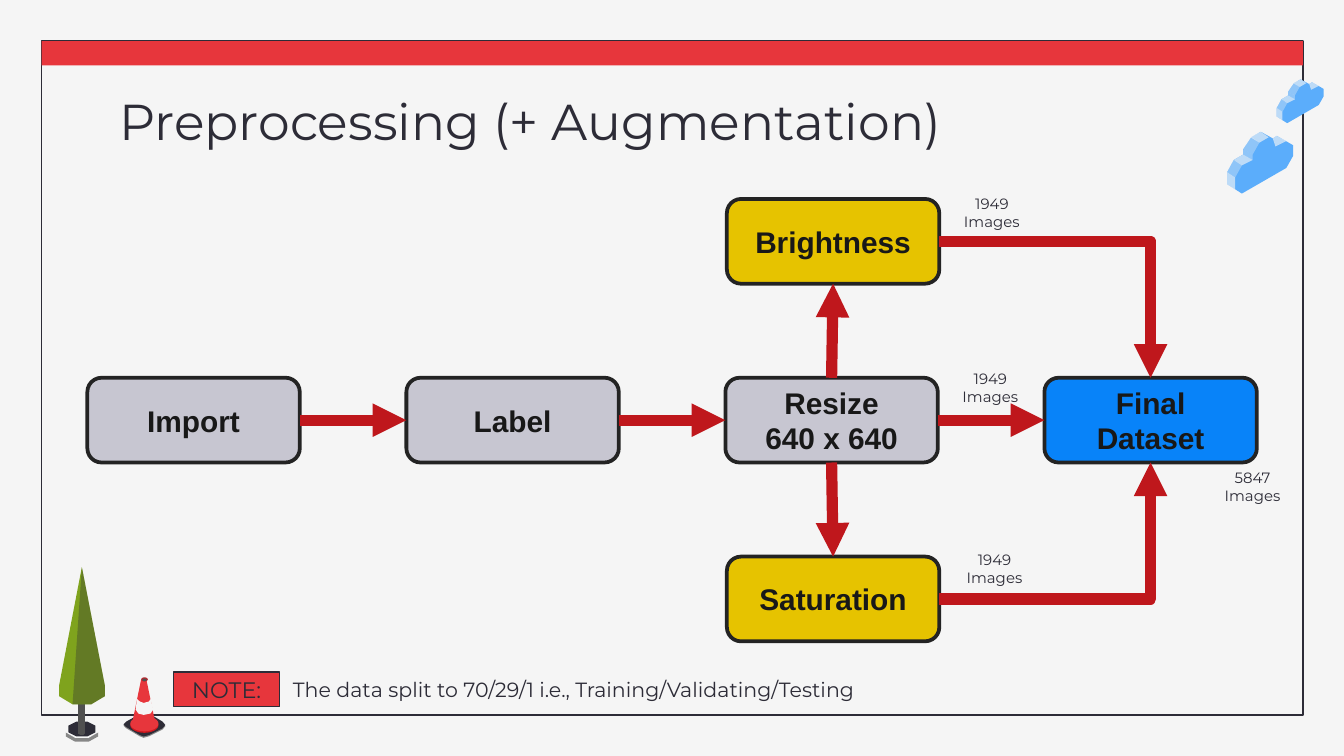
"""Build the slide on image preprocessing and augmentation as a flow diagram."""
from lxml.etree import SubElement
from pptx import Presentation
from pptx.dml.color import RGBColor
from pptx.enum.shapes import MSO_CONNECTOR as LINK, MSO_SHAPE as SHAPE
from pptx.enum.text import MSO_ANCHOR as ANCHOR, MSO_AUTO_SIZE as FIT, PP_ALIGN as ALIGN
from pptx.oxml.ns import qn
from pptx.util import Pt

PAPER = RGBColor(0xF5, 0xF5, 0xF5)
INK = RGBColor(0x2D, 0x2C, 0x37)
RED = RGBColor(0xE7, 0x36, 0x3C)
DARK_RED = RGBColor(0xCE, 0x18, 0x1E)
TIP_RED = RGBColor(0xB1, 0x28, 0x2F)
ARROW_RED = RGBColor(0xBF, 0x17, 0x1C)
LILAC = RGBColor(0xC7, 0xC6, 0xD1)
BLUE = RGBColor(0x08, 0x83, 0xF9)
YELLOW = RGBColor(0xE6, 0xC3, 0x00)
EDGE = RGBColor(0x23, 0x23, 0x23)
BLACK = RGBColor(0x18, 0x18, 0x18)
SKY = RGBColor(0x5B, 0xAD, 0xFB)
GRAY = RGBColor(0x87, 0x87, 0x87)
BARK = RGBColor(0x50, 0x50, 0x50)
LEAF = RGBColor(0x7F, 0xA3, 0x1D)

TITLE = "Preprocessing (+ Augmentation)"
NOTE_TAG = "NOTE:"
NOTE = "The data split to 70/29/1 i.e., Training/Validating/Testing"
STEPS = {
    "import": (["Import"], 0, 0, LILAC),
    "label": (["Label"], 1, 0, LILAC),
    "resize": (["Resize", "640 x 640"], 2, 0, LILAC),
    "final": (["Final Dataset"], 3, 0, BLUE),
    "brightness": (["Brightness"], 2, -1, YELLOW),
    "saturation": (["Saturation"], 2, 1, YELLOW),
}
TOP, LEFT, BOTTOM, RIGHT = range(4)
FLOWS = [
    ("import", RIGHT, "label", LEFT),
    ("label", RIGHT, "resize", LEFT),
    ("resize", RIGHT, "final", LEFT),
    ("resize", TOP, "brightness", BOTTOM),
    ("resize", BOTTOM, "saturation", TOP),
    ("saturation", RIGHT, "final", BOTTOM),
    ("brightness", RIGHT, "final", TOP),
]
COUNTS = [
    ("1949 Images", 501.8, 194.4, 57.6),
    ("1949 Images", 502.6, 100.8, 57.6),
    ("1949 Images", 504, 291.6, 57.6),
    ("5847 Images", 643.7, 247.7, 54.7),
]

CLOUDS = [(657.4, 70.6, 1), (684, 42.5, 0.71)]
CLOUD = [
    (SKY, 100, [(18, 0), (13, 2.9), (8.6, 9.4), (8.6, 12.2), (3.6, 15.1), (0, 21.6), (0, 28.1),
                (7.9, 33.1), (31.7, 19.4), (35.3, 13), (35.3, 7.2), (26.6, 2.2), (24.5, 3.6)]),
    (PAPER, 64, [(18, 0), (12.5, 2.9), (17.3, 5.8), (22.3, 2.9)]),
    (PAPER, 64, [(8.6, 12.2), (3.6, 15.1), (7.9, 18), (13.7, 15.1)]),
    (PAPER, 34, [(3.6, 15.1), (0, 21.6), (4.3, 24.5), (7.9, 18)]),
    (PAPER, 34, [(8.6, 9.4), (8.6, 12.2), (13.7, 15.1), (13.7, 12.2)]),
    (PAPER, 64, [(0, 21.6), (0, 28.1), (4.3, 31), (4.3, 24.5)]),
    (PAPER, 64, [(26.6, 2.2), (24.5, 3.6), (25.9, 7.9), (31.7, 5)]),
    (PAPER, 34, [(13, 2.9), (8.6, 9.4), (13.7, 12.2), (17.3, 5.8)]),
]
TREE = [
    (GRAY, 100, [(35.3, 392.4), (52.6, 392.4), (52.6, 394.6), (47.5, 397.4), (40.3, 397.4),
                 (35.3, 394.6)]),
    (PAPER, 100, [(40.3, 385.9), (35.3, 388.8), (35.3, 392.4), (40.3, 395.3), (47.5, 395.3),
                  (52.6, 392.4), (52.6, 388.8), (47.5, 385.9)]),
    (INK, 100, [(41, 386.6), (36.7, 388.8), (36.7, 392.4), (41, 394.6), (46.8, 394.6),
                (51.1, 392.4), (51.1, 388.8), (46.8, 386.6)]),
    (BARK, 100, [(41.8, 373), (45.4, 373), (45.4, 393.1), (44.6, 393.8), (43.2, 393.8),
                 (41.8, 393.1)]),
    (LEAF, 100, [(43.9, 303.8), (31.7, 367.2), (31.7, 373), (38.9, 377.3), (49, 377.3),
                 (56.2, 373), (56.2, 367.2)]),
    (INK, 34, [(43.9, 303.8), (38.9, 377.3), (49, 377.3), (56.2, 373), (56.2, 367.2)]),
]
CONE_BASE = [(77, 382.3), (74.2, 383), (67.7, 386.6), (66.2, 388.1), (67.7, 389.5), (74.9, 393.8),
             (77, 394.6), (79.9, 393.8), (87.1, 390.2), (88.6, 388.4), (87.1, 386.6), (79.9, 382.3)]
CONE_RINGS = [(DARK_RED, 69.8, 384.4, 15.1, 8.2), (RED, 69.8, 383.6, 15.1, 8.2)]
CONE_BODY = [
    (RED, 100, [(75.6, 364.3), (71.3, 385.2), (72.7, 387.4), (75, 388.6), (77, 388.8),
                (79.2, 388.6), (81.4, 387.4), (82.8, 385.2), (78.5, 364.3)]),
    (PAPER, 100, [(73.4, 374.4), (72.7, 380.2), (74.2, 382.3), (77, 383), (80.6, 382.3),
                  (82.1, 380.2), (80.6, 374.4), (79.9, 375.8), (77, 376.6), (74.9, 375.8)]),
]
CONE_TIP = [(TIP_RED, 75.6, 362.9, 3.6, 2.2), (BARK, 76.3, 363.6, 2.2, 1.4)]

prs = Presentation()
prs.slide_width, prs.slide_height = Pt(720), Pt(405)
slide = prs.slides.add_slide(prs.slide_layouts[5])
slide.background.fill.solid()
slide.background.fill.fore_color.rgb = PAPER
shapes = slide.shapes


def paint(shape, fill=None, line=None, weight=0.75, opacity=100):
    shape.shadow.inherit = False
    if fill is None:
        shape.fill.background()
    else:
        shape.fill.solid()
        shape.fill.fore_color.rgb = fill
        if opacity < 100:
            color = shape.fill._xPr.find(qn("a:solidFill"))[0]
            SubElement(color, qn("a:alpha"), val=str(opacity * 1000))
    if line is None:
        shape.line.fill.background()
    else:
        shape.line.color.rgb = line
        shape.line.width = Pt(weight)
    return shape


def preset(kind, left, top, width, height, **look):
    return paint(shapes.add_shape(kind, Pt(left), Pt(top), Pt(width), Pt(height)), **look)


def draw(parts, left=0, top=0, scale=1):
    for color, opacity, points in parts:
        corners = [(Pt(left + x * scale), Pt(top + y * scale)) for x, y in points]
        outline = shapes.build_freeform(*corners[0])
        outline.add_line_segments(corners[1:], close=True)
        paint(outline.convert_to_shape(), color, opacity=opacity)


def ovals(parts):
    for color, *place in parts:
        preset(SHAPE.OVAL, *place, fill=color)


def write(shape, lines, size, color=INK, font="Montserrat", bold=False,
          align=ALIGN.CENTER, anchor=ANCHOR.MIDDLE, inset=3.6):
    frame = shape.text_frame
    frame.word_wrap, frame.auto_size, frame.vertical_anchor = True, FIT.NONE, anchor
    frame.margin_left = frame.margin_right = Pt(7.2)
    frame.margin_top = frame.margin_bottom = Pt(inset)
    for i, line in enumerate(lines):
        paragraph = frame.add_paragraph() if i else frame.paragraphs[0]
        paragraph.alignment = align
        run = paragraph.add_run()
        run.text = line
        run.font.size, run.font.name, run.font.bold = Pt(size), font, bold
        run.font.color.rgb = color


def textbox(left, top, width, height):
    return shapes.add_textbox(Pt(left), Pt(top), Pt(width), Pt(height))


preset(SHAPE.RECTANGLE, 22.3, 22, 675.7, 361, line=INK)
preset(SHAPE.RECTANGLE, 22.3, 22, 675.7, 13, fill=RED)
for cloud_left, cloud_top, cloud_scale in CLOUDS:
    draw(CLOUD, cloud_left, cloud_top, cloud_scale)
draw(TREE)
draw([(GRAY, 100, CONE_BASE)], top=0.7)
draw([(INK, 100, CONE_BASE)])
ovals(CONE_RINGS)
draw(CONE_BODY)
ovals(CONE_TIP)

title = shapes.title
title.left, title.top, title.width, title.height = Pt(56.9), Pt(41), Pt(607), Pt(45.4)
write(title, [TITLE], 27, align=ALIGN.LEFT, anchor=ANCHOR.TOP, inset=7.2)

boxes = {}
for step, (lines, column, row, color) in STEPS.items():
    nudge = 0.8 if row else 0
    boxes[step] = preset(SHAPE.ROUNDED_RECTANGLE, 46.8 + column * 170.9 + nudge,
                         202.4 + row * 95.8, 113.8, 45.4, fill=color, line=EDGE, weight=2)
    write(boxes[step], lines, 16, BLACK, "Arial", True)

for source, out_side, target, in_side in FLOWS:
    bent = out_side == RIGHT and in_side != LEFT
    arrow = shapes.add_connector(LINK.ELBOW if bent else LINK.STRAIGHT, 0, 0, 0, 0)
    arrow.begin_connect(boxes[source], out_side)
    arrow.end_connect(boxes[target], in_side)
    arrow.line.color.rgb, arrow.line.width = ARROW_RED, Pt(6)
    properties = arrow._element.spPr
    if bent:
        properties.find(qn("a:prstGeom")).set("prst", "bentConnector2")
    SubElement(properties.find(qn("a:ln")), qn("a:tailEnd"), type="triangle")
    SubElement(properties, qn("a:effectLst"))

for count, left, top, width in COUNTS:
    write(textbox(left, top, width, 26.6), [count], 8, anchor=ANCHOR.TOP)

write(textbox(149.8, 360, 509, 18.7), [NOTE], 11, align=ALIGN.LEFT, inset=7.2)
note_tag = preset(SHAPE.RECTANGLE, 92.9, 360, 56.9, 18.7, fill=RED, line=INK)
write(note_tag, [NOTE_TAG], 12, inset=7.2)

prs.save("out.pptx")
